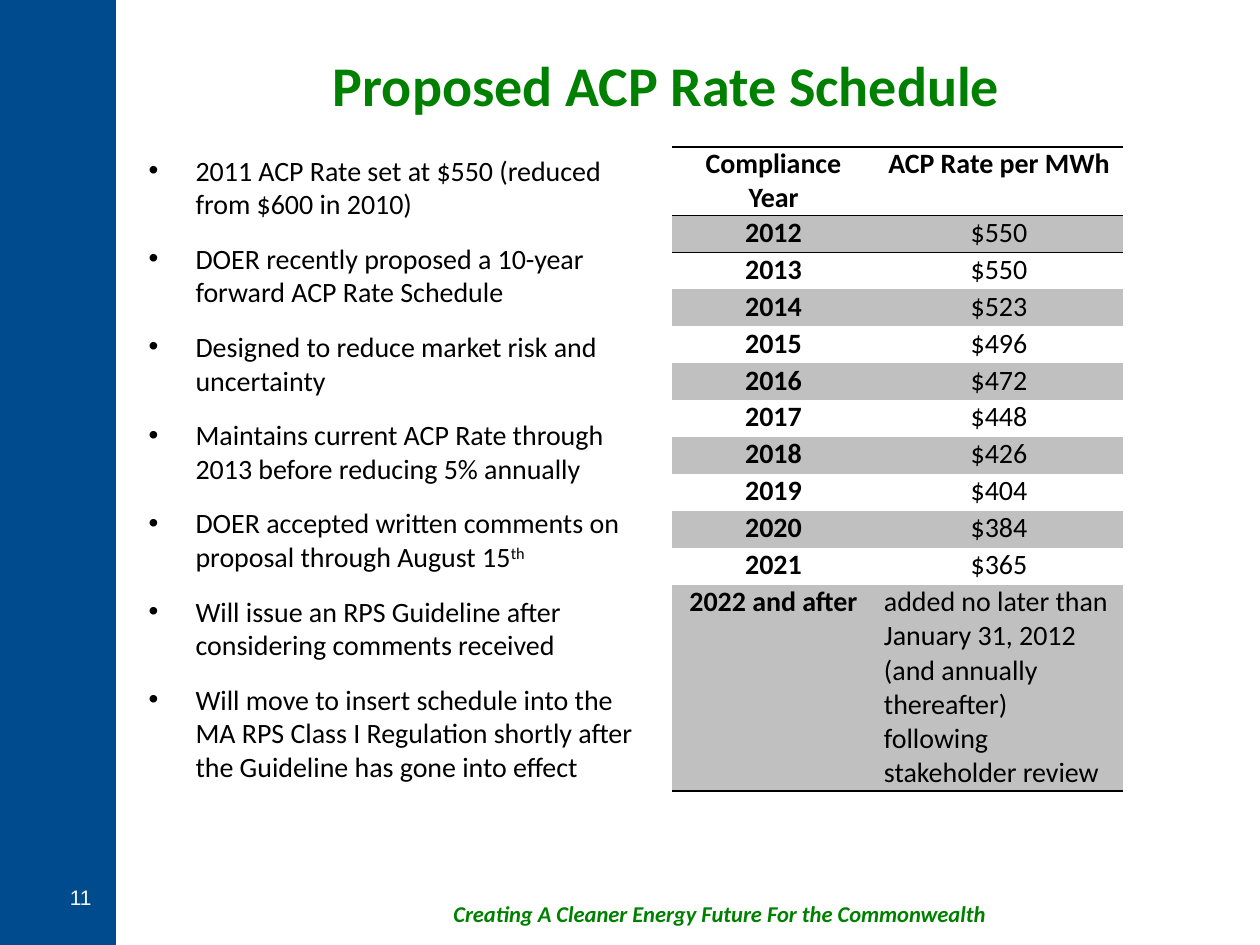
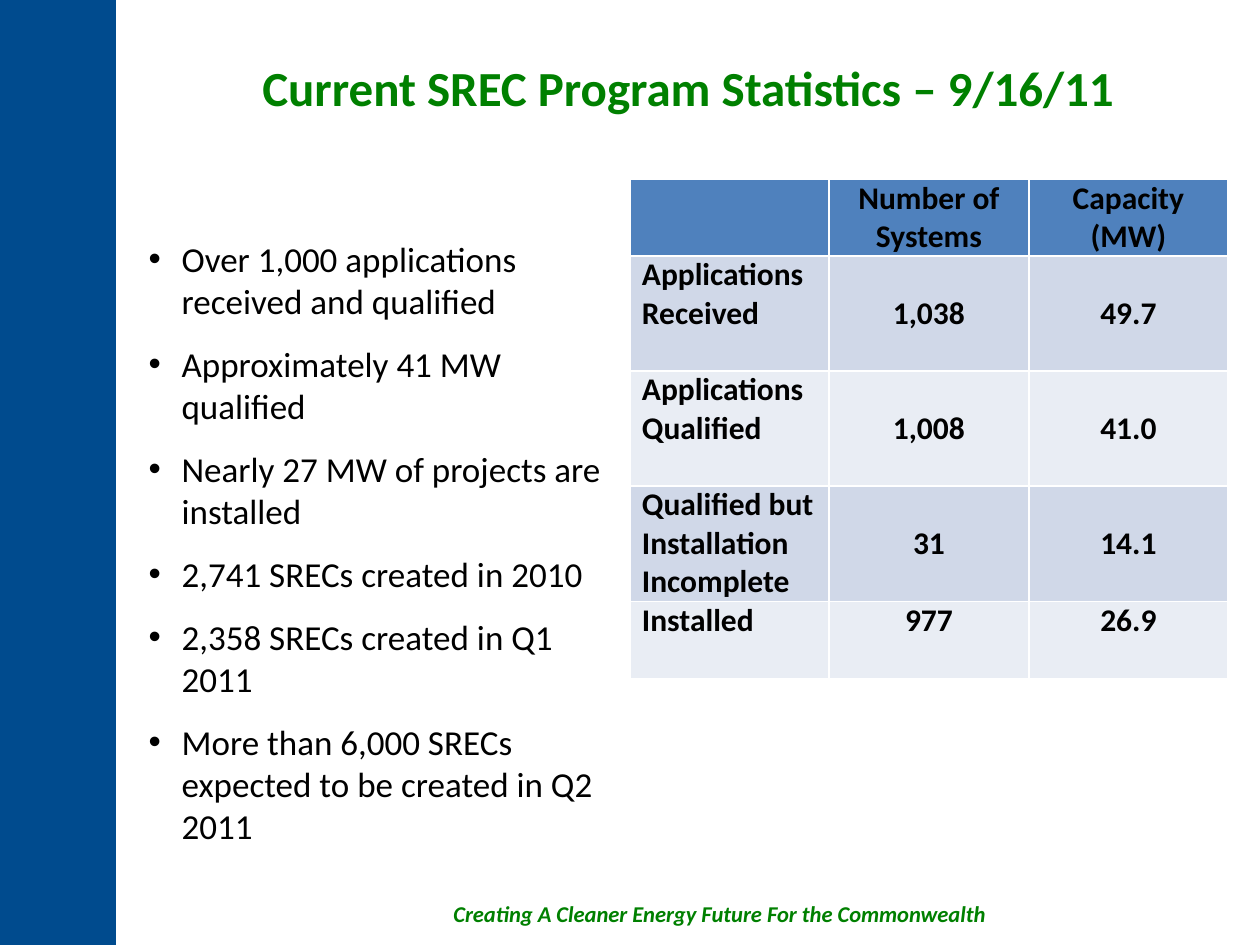
from collections.abc import Callable
from dataclasses import dataclass

from lxml import etree
from pptx import Presentation
from pptx.dml.color import RGBColor
from pptx.enum.shapes import MSO_SHAPE
from pptx.enum.text import MSO_ANCHOR, MSO_AUTO_SIZE, PP_ALIGN
from pptx.oxml.ns import qn
from pptx.presentation import Presentation as Deck
from pptx.shapes.base import BaseShape
from pptx.slide import Slide, SlideLayout
from pptx.text.text import TextFrame
from pptx.util import Emu, Pt

EMU_PER_PX = 914400 / 126
TITLE_AND_CONTENT = 1
NO_TABLE_STYLE = "{2D5ABB26-0587-4C30-8999-92F81FD0307C}"
RECTANGLE = MSO_SHAPE.RECTANGLE
LEFT, CENTER, RIGHT = PP_ALIGN.LEFT, PP_ALIGN.CENTER, PP_ALIGN.RIGHT
TOP, MIDDLE = MSO_ANCHOR.TOP, MSO_ANCHOR.MIDDLE
NO_AUTOFIT = MSO_AUTO_SIZE.NONE


@dataclass(frozen=True)
class Theme:
    font: str = "Calibri"
    number_font: str = "Arial"
    blue: str = "004B8E"
    green: str = "008000"
    black: str = "000000"
    white: str = "FFFFFF"
    number_color: str = "F8F8F8"
    silver: str = "C0C0C0"
    header_blue: str = "4F81BD"
    band_dark: str = "D0D8E8"
    band_light: str = "E9EDF4"
    footer_size: float = 12.9
    number_size: float = 12
    list_gap: float = 12
    border_width: float = 1


THEME = Theme()


@dataclass(frozen=True)
class Box:
    left: int
    top: int
    width: int
    height: int


@dataclass(frozen=True)
class TextStyle:
    size: float
    color: str = THEME.black
    bold: bool = False
    italic: bool = False
    font: str = THEME.font


@dataclass(frozen=True)
class BulletList:
    box: Box
    size: float
    indent: int
    items: tuple[str, ...]


@dataclass(frozen=True)
class CellStyle:
    text: TextStyle
    fill: str | None
    alignment: PP_ALIGN
    anchor: MSO_ANCHOR
    margin_left: int
    margin_right: int
    border_sides: str
    border_color: str


@dataclass(frozen=True)
class TableSpec:
    left: int
    top: int
    column_widths: tuple[int, ...]
    row_heights: tuple[int, ...]
    rows: tuple[tuple[str, ...], ...]
    cell_style: Callable[[int, int], CellStyle]


@dataclass(frozen=True)
class SlideSpec:
    title: str
    title_box: Box
    title_size: float
    bullets: BulletList
    table: TableSpec
    number: str = ""


def px(length: int) -> Emu:
    return Emu(round(length * EMU_PER_PX))


def edges(box: Box) -> tuple[Emu, Emu, Emu, Emu]:
    return px(box.left), px(box.top), px(box.width), px(box.height)


def place(shape: BaseShape, box: Box) -> None:
    shape.left, shape.top, shape.width, shape.height = edges(box)


def add_run(paragraph, text: str, style: TextStyle):
    run = paragraph.add_run()
    run.text = text
    font = run.font
    font.name, font.size = style.font, Pt(style.size)
    font.bold, font.italic = style.bold, style.italic
    font.color.rgb = RGBColor.from_string(style.color)
    return run


def write_lines(frame: TextFrame, text: str, style: TextStyle, alignment: PP_ALIGN) -> None:
    for index, line in enumerate(text.split("\n")):
        paragraph = frame.add_paragraph() if index else frame.paragraphs[0]
        paragraph.alignment = alignment
        add_run(paragraph, line, style)


def add_label(slide: Slide, box: Box, text: str, style: TextStyle,
              alignment: PP_ALIGN = LEFT, anchor: MSO_ANCHOR = TOP) -> BaseShape:
    label = slide.shapes.add_textbox(*edges(box))
    label.text_frame.word_wrap = True
    label.text_frame.vertical_anchor = anchor
    write_lines(label.text_frame, text, style, alignment)
    return label


def add_shared_parts(slide: Slide, layout: SlideLayout) -> None:
    """Build the side band and footer, then move them to the layout."""
    band = slide.shapes.add_shape(RECTANGLE, *edges(Box(0, 0, 116, 945)))
    band.shadow.inherit = False
    band.fill.solid()
    band.fill.fore_color.rgb = RGBColor.from_string(THEME.blue)
    band.line.fill.background()
    footer = add_label(slide, Box(441, 894, 598, 50),
                       "Creating A Cleaner Energy Future For the Commonwealth",
                       TextStyle(THEME.footer_size, THEME.green, bold=True, italic=True))
    for shape_id, shape in enumerate((band, footer), start=101):
        shape.element.xpath(".//p:cNvPr")[0].set("id", str(shape_id))
        layout.shapes.element.append(shape.element)


def set_title(slide: Slide, spec: SlideSpec) -> None:
    title = slide.shapes.title
    place(title, spec.title_box)
    title.text_frame.auto_size = NO_AUTOFIT
    title.text_frame.vertical_anchor = MIDDLE
    write_lines(title.text_frame, spec.title,
                TextStyle(spec.title_size, THEME.green, bold=True), CENTER)


def fill_list(slide: Slide, bullets: BulletList) -> None:
    """Fill the body placeholder; text after ^ in an item is superscript."""
    body = slide.placeholders[1]
    place(body, bullets.box)
    frame = body.text_frame
    frame.auto_size = NO_AUTOFIT
    style = TextStyle(bullets.size)
    for index, item in enumerate(bullets.items):
        paragraph = frame.add_paragraph() if index else frame.paragraphs[0]
        properties = paragraph._p.get_or_add_pPr()
        properties.set("marL", str(px(bullets.indent)))
        properties.set("indent", str(-px(bullets.indent)))
        paragraph.space_before, paragraph.space_after = Pt(0), Pt(THEME.list_gap)
        text, _, superscript = item.partition("^")
        add_run(paragraph, text, style)
        if superscript:
            run = add_run(paragraph, superscript, style)
            run.font._element.set("baseline", "30000")


def add_borders(cell_element, sides: str, color: str) -> None:
    """Draw the sides named by the letters L, R, T and B, in that order."""
    properties = cell_element.get_or_add_tcPr()
    for index, side in enumerate(sides):
        line = etree.Element(qn(f"a:ln{side}"), w=str(Pt(THEME.border_width)))
        fill = etree.SubElement(line, qn("a:solidFill"))
        etree.SubElement(fill, qn("a:srgbClr"), val=color)
        properties.insert(index, line)


def add_data_table(slide: Slide, spec: TableSpec) -> None:
    box = Box(spec.left, spec.top, sum(spec.column_widths), sum(spec.row_heights))
    graphic = slide.shapes.add_table(len(spec.rows), len(spec.column_widths), *edges(box))
    graphic.element.xpath(".//a:tableStyleId")[0].text = NO_TABLE_STYLE
    table = graphic.table
    table.first_row = table.horz_banding = False
    for column, width in zip(table.columns, spec.column_widths):
        column.width = px(width)
    for row, height in zip(table.rows, spec.row_heights):
        row.height = px(height)
    for row_index, texts in enumerate(spec.rows):
        for column_index, text in enumerate(texts):
            cell = table.cell(row_index, column_index)
            style = spec.cell_style(row_index, column_index)
            cell.margin_left, cell.margin_right = px(style.margin_left), px(style.margin_right)
            cell.margin_top = cell.margin_bottom = 0
            cell.vertical_anchor = style.anchor
            if style.fill:
                cell.fill.solid()
                cell.fill.fore_color.rgb = RGBColor.from_string(style.fill)
            else:
                cell.fill.background()
            if text:
                write_lines(cell.text_frame, text, style.text, style.alignment)
            add_borders(cell._tc, style.border_sides, style.border_color)


RATES = (550, 550, 523, 496, 472, 448, 426, 404, 384, 365)
RATE_ROWS = (
    ("Compliance Year", "ACP Rate per MWh"),
    *((str(year), f"${rate}") for year, rate in enumerate(RATES, start=2012)),
    ("2022 and after", "added no later than January 31, 2012 (and annually thereafter) "
                       "following stakeholder review"),
)
STATISTICS_ROWS = (
    ("", "Number of Systems", "Capacity\n(MW)"),
    ("Applications Received", "1,038", "49.7"),
    ("Applications Qualified", "1,008", "41.0"),
    ("Qualified but Installation Incomplete", "31", "14.1"),
    ("Installed", "977", "26.9"),
)


def rate_cell_style(row: int, column: int) -> CellStyle:
    last = len(RATE_ROWS) - 1
    return CellStyle(
        text=TextStyle(16, bold=row == 0 or column == 0),
        fill=THEME.silver if row % 2 else None,
        alignment=LEFT if (row, column) == (last, 1) else CENTER,
        anchor=TOP, margin_left=9, margin_right=9,
        border_sides={0: "TB", 1: "T", last: "B"}.get(row, ""),
        border_color=THEME.black)


def statistics_cell_style(row: int, column: int) -> CellStyle:
    is_label = row > 0 and column == 0
    band = THEME.band_dark if row % 2 else THEME.band_light
    return CellStyle(
        text=TextStyle(18, bold=True),
        fill=band if row else THEME.header_blue,
        alignment=LEFT if is_label else CENTER,
        anchor=TOP if is_label or row == len(STATISTICS_ROWS) - 1 else MIDDLE,
        margin_left=12 if is_label else 0, margin_right=0,
        border_sides="LRTB", border_color=THEME.white)


SLIDES = (
    SlideSpec(
        "Proposed ACP Rate Schedule", Box(136, 32, 1061, 105), 32,
        BulletList(Box(136, 147, 514, 703), 16, 47, (
            "2011 ACP Rate set at $550 (reduced from $600 in 2010)",
            "DOER recently proposed a 10-year forward ACP Rate Schedule",
            "Designed to reduce market risk and uncertainty",
            "Maintains current ACP Rate through 2013 before reducing 5% annually",
            "DOER accepted written comments on proposal through August 15^th",
            "Will issue an RPS Guideline after considering comments received",
            "Will move to insert schedule into the MA RPS Class I Regulation shortly "
            "after the Guideline has gone into effect")),
        TableSpec(672, 147, (203, 248), (68, *[37] * len(RATES), 206),
                  RATE_ROWS, rate_cell_style),
        number="11"),
    SlideSpec(
        "Current SREC Program Statistics – 9/16/11", Box(116, 38, 1144, 98), 28,
        BulletList(Box(136, 231, 504, 546), 20, 33, (
            "Over 1,000 applications received and qualified",
            "Approximately 41 MW qualified",
            "Nearly 27 MW of projects are installed",
            "2,741 SRECs created in 2010",
            "2,358 SRECs created in Q1 2011",
            "More than 6,000 SRECs expected to be created in Q2 2011")),
        TableSpec(630, 179, (199, 200, 199), (76, 115, 115, 115, 77),
                  STATISTICS_ROWS, statistics_cell_style)),
)


def add_slide(presentation: Deck, layout: SlideLayout, spec: SlideSpec) -> Slide:
    slide = presentation.slides.add_slide(layout)
    set_title(slide, spec)
    fill_list(slide, spec.bullets)
    add_data_table(slide, spec.table)
    if spec.number:
        add_label(slide, Box(31, 872, 73, 50), spec.number,
                  TextStyle(THEME.number_size, THEME.number_color, font=THEME.number_font),
                  RIGHT, MIDDLE)
    return slide


def main() -> None:
    presentation = Presentation()
    presentation.slide_width, presentation.slide_height = px(1260), px(945)
    layout = presentation.slide_layouts[TITLE_AND_CONTENT]
    slides = [add_slide(presentation, layout, spec) for spec in SLIDES]
    add_shared_parts(slides[0], layout)
    presentation.save("out.pptx")


if __name__ == "__main__":
    main()
